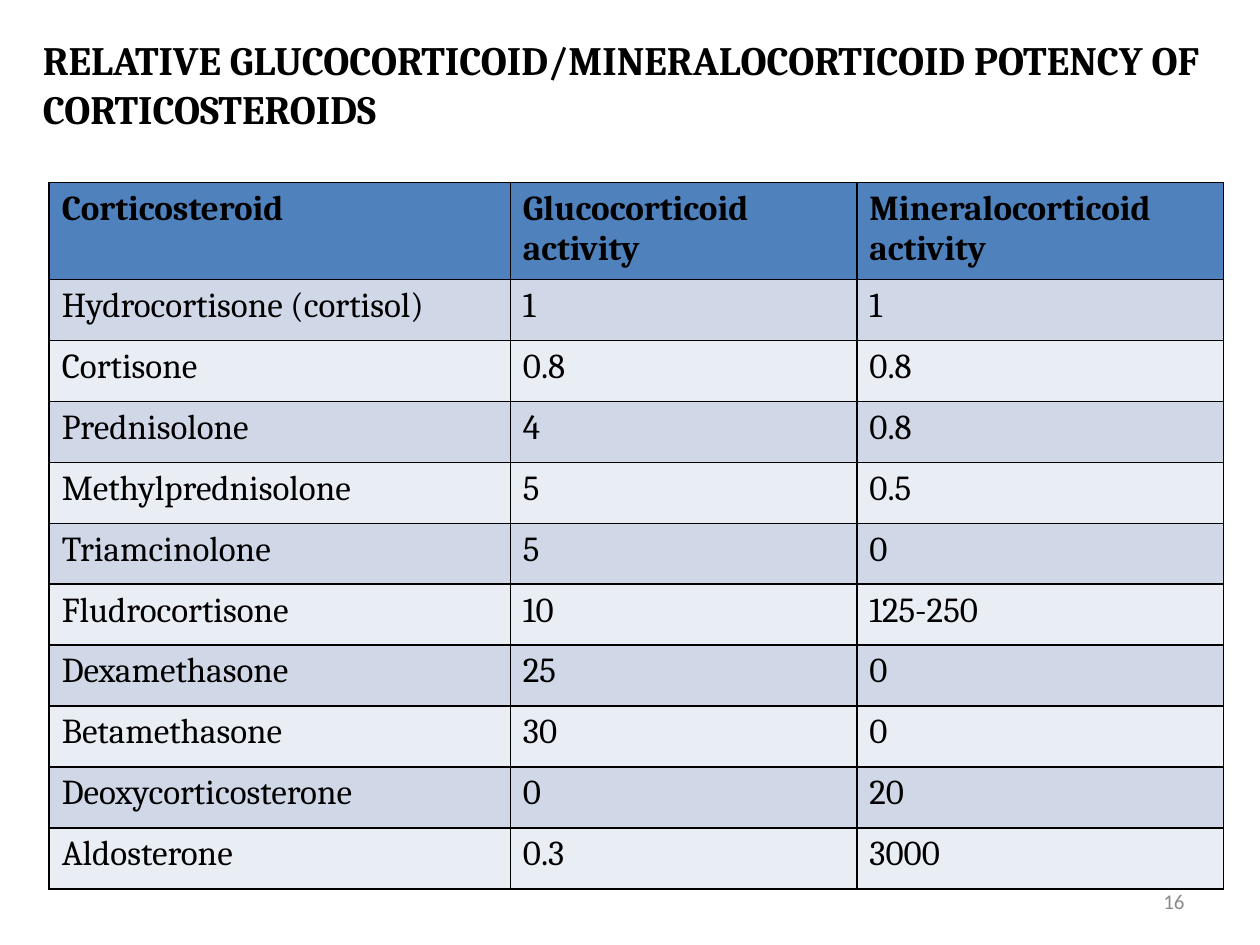
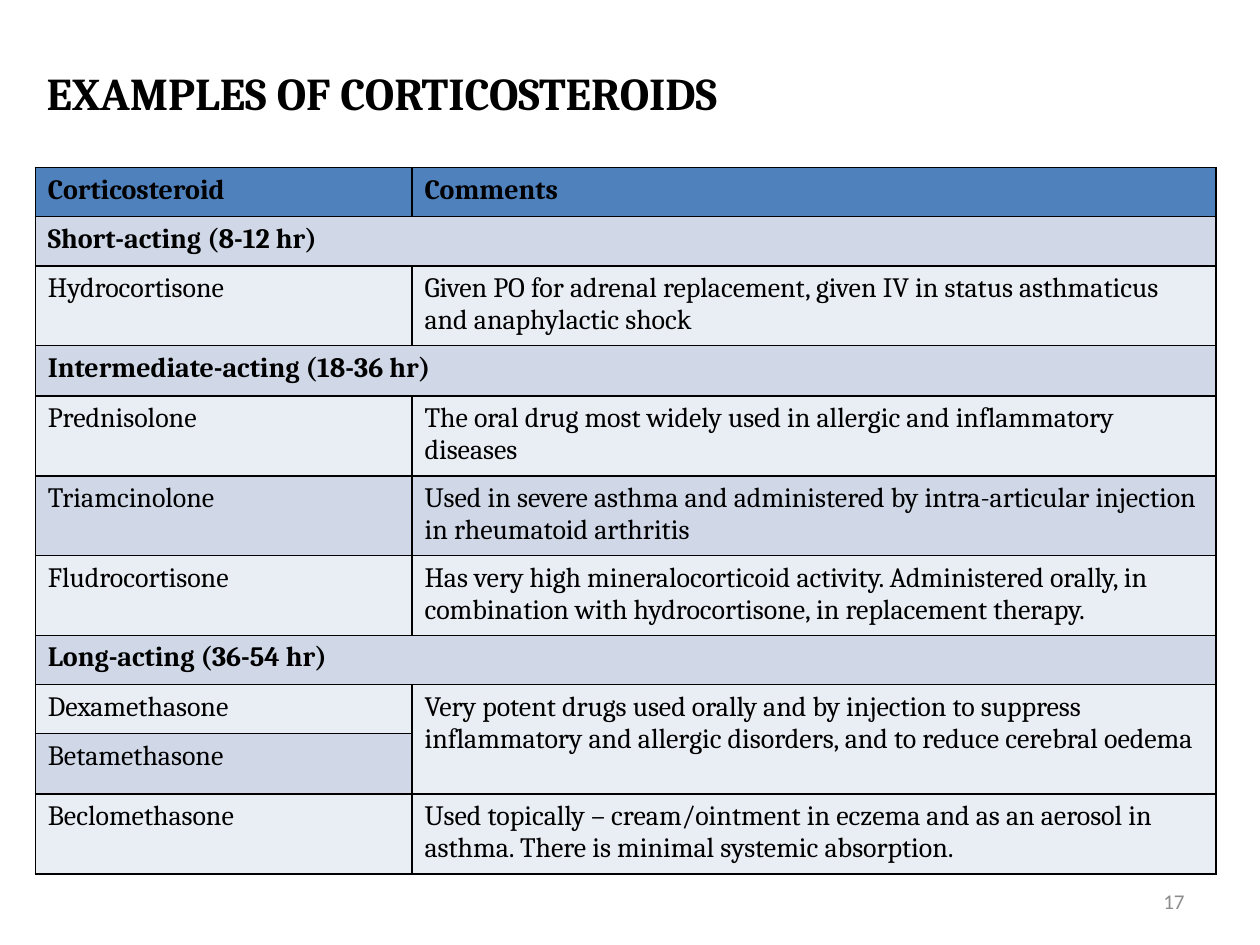
"""Build two slides of tables about corticosteroids."""
from lxml.etree import SubElement
from pptx import Presentation
from pptx.dml.color import RGBColor
from pptx.enum.text import MSO_ANCHOR as Anchor, MSO_AUTO_SIZE as AutoSize, PP_ALIGN as Align
from pptx.oxml.ns import qn
from pptx.util import Inches, Pt

BLACK = RGBColor(0x00, 0x00, 0x00)
GREY = RGBColor(0x8C, 0x8C, 0x8C)
HEADER_BLUE = RGBColor(0x4F, 0x81, 0xBD)
BANDS = (RGBColor(0xE9, 0xED, 0xF4), RGBColor(0xD0, 0xD8, 0xE8))
SERIF = "Cambria"
SANS = "Calibri"

POTENCIES = [
    ("Corticosteroid", "Glucocorticoid activity", "Mineralocorticoid activity"),
    ("Hydrocortisone (cortisol)", "1", "1"),
    ("Cortisone", "0.8", "0.8"),
    ("Prednisolone", "4", "0.8"),
    ("Methylprednisolone", "5", "0.5"),
    ("Triamcinolone", "5", "0"),
    ("Fludrocortisone", "10", "125-250"),
    ("Dexamethasone", "25", "0"),
    ("Betamethasone", "30", "0"),
    ("Deoxycorticosterone", "0", "20"),
    ("Aldosterone", "0.3", "3000"),
]
# A one-item row is a section heading; None continues the cell above.
EXAMPLES = [
    ("Corticosteroid", "Comments"),
    ("Short-acting (8-12 hr)",),
    ("Hydrocortisone", "Given PO for adrenal replacement, given IV in status asthmaticus "
                       "and anaphylactic shock"),
    ("Intermediate-acting (18-36 hr)",),
    ("Prednisolone", "The oral drug most widely used in allergic and inflammatory diseases"),
    ("Triamcinolone", "Used in severe asthma and administered by intra-articular injection "
                      "in rheumatoid arthritis"),
    ("Fludrocortisone", "Has very high mineralocorticoid activity. Administered orally, in "
                        "combination with hydrocortisone, in replacement therapy."),
    ("Long-acting (36-54 hr)",),
    ("Dexamethasone", "Very potent drugs used orally and by injection to suppress "
                      "inflammatory and allergic disorders, and to reduce cerebral oedema"),
    ("Betamethasone", None),
    ("Beclomethasone", "Used topically – cream/ointment in eczema and as an aerosol in "
                       "asthma. There is minimal systemic absorption."),
]
POTENCY_HEIGHTS = [0.74] + [0.484] * 10
EXAMPLE_HEIGHTS = [0.39, 0.39, 0.61, 0.4, 0.61, 0.61, 0.61, 0.39, 0.39, 0.48, 0.61]


def write(frame, text, size, font=SERIF, color=BLACK, bold=False, align=Align.LEFT):
    """Write one formatted run into the first paragraph of a text frame."""
    para = frame.paragraphs[0]
    para.alignment = align
    span = para.add_run()
    span.text = text
    span.font.name = font
    span.font.size = Pt(size)
    span.font.bold = bold
    span.font.color.rgb = color


def add_page(deck, title, title_box, title_size, number):
    """Add a page with its title and page number."""
    page = deck.slides.add_slide(deck.slide_layouts[5])
    heading = page.shapes.title
    heading.left, heading.top, heading.width, heading.height = map(Inches, title_box)
    frame = heading.text_frame
    frame.word_wrap = True
    frame.auto_size = AutoSize.NONE
    frame.vertical_anchor = Anchor.MIDDLE
    write(frame, title, title_size, bold=True)

    box = page.shapes.add_textbox(Inches(7.17), Inches(6.95), Inches(2.33), Inches(0.4))
    box.text_frame.word_wrap = True
    box.text_frame.vertical_anchor = Anchor.MIDDLE
    write(box.text_frame, str(number), 12, SANS, GREY, align=Align.RIGHT)
    return page


def outline(cell):
    """Draw a thin black border on all four sides of a cell."""
    properties = cell._tc.get_or_add_tcPr()
    for side in ("a:lnL", "a:lnR", "a:lnT", "a:lnB"):
        line = SubElement(properties, qn(side), w=str(Pt(1)))
        fill = SubElement(line, qn("a:solidFill"))
        SubElement(fill, qn("a:srgbClr"), val=str(BLACK))


def add_grid(page, left, top, widths, heights, rows, size):
    """Add a banded table, merging section headings and continued cells."""
    grid = page.shapes.add_table(
        len(rows), len(widths), Inches(left), Inches(top),
        Inches(sum(widths)), Inches(sum(heights))).table
    for column, width in zip(grid.columns, widths):
        column.width = Inches(width)
    for index, (row, height) in enumerate(zip(rows, heights)):
        grid.rows[index].height = Inches(height)
        is_section = len(row) == 1
        for cell in grid.rows[index].cells:
            outline(cell)
            cell.fill.solid()
            cell.fill.fore_color.rgb = BANDS[index % 2] if index else HEADER_BLUE
        for position, text in enumerate(row):
            cell = grid.cell(index, position)
            if text is None:
                grid.cell(index - 1, position).merge(cell)
            else:
                write(cell.text_frame, text, size, bold=index == 0 or is_section)
        if is_section:
            grid.cell(index, 0).merge(grid.cell(index, len(widths) - 1))


def main():
    """Build and save the deck."""
    deck = Presentation()
    deck.slide_width, deck.slide_height = Inches(10), Inches(7.5)

    page = add_page(deck, "RELATIVE GLUCOCORTICOID/MINERALOCORTICOID POTENCY OF CORTICOSTEROIDS",
                    (0.24, 0.17, 9.46, 0.99), 23, 16)
    add_grid(page, 0.39, 1.45, (3.66, 2.75, 2.91), POTENCY_HEIGHTS, POTENCIES, 20)

    page = add_page(deck, "EXAMPLES OF CORTICOSTEROIDS", (0.27, 0.28, 9.39, 0.9), 26, 17)
    add_grid(page, 0.28, 1.33, (2.99, 6.38), EXAMPLE_HEIGHTS, EXAMPLES, 16)

    deck.save("out.pptx")


if __name__ == "__main__":
    main()
